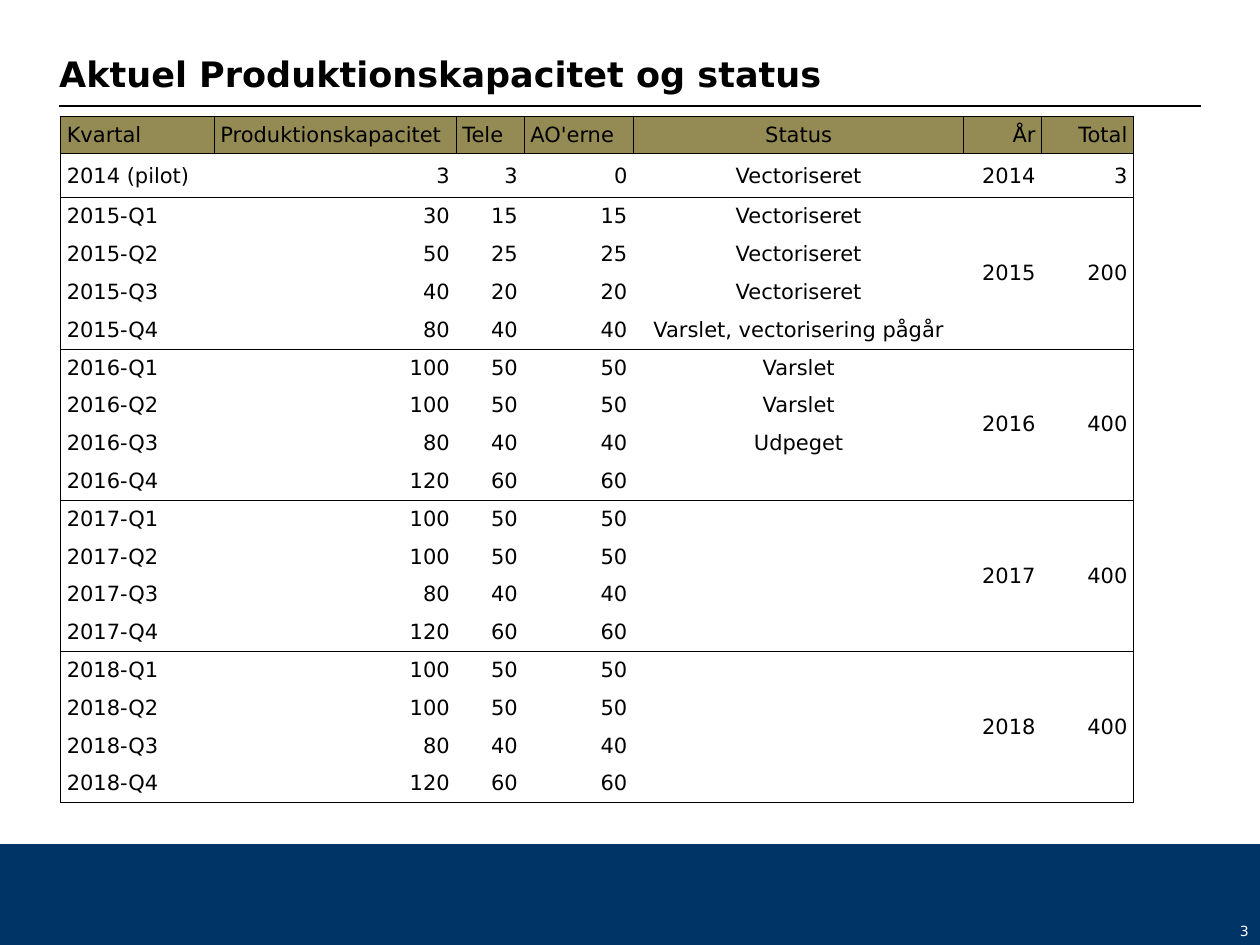
from dataclasses import dataclass

from lxml import etree
from pptx import Presentation
from pptx.dml.color import RGBColor
from pptx.enum import shapes, text
from pptx.oxml import ns
from pptx.util import Inches, Pt

LEFT, MID, RIGHT = text.PP_ALIGN.LEFT, text.PP_ALIGN.CENTER, text.PP_ALIGN.RIGHT


@dataclass
class Theme:
    face: str = "DejaVu Sans"
    ink: str = "000000"
    paper: str = "FFFFFF"
    navy: str = "003366"
    olive: str = "948B54"
    head: int = 20
    body: int = 12
    note: int = 8
    rule: float = 1
    edge: float = 0.5
    pad: float = 0.05


class Deck:
    def __init__(self, theme):
        self.theme = theme
        self.prs = Presentation()
        self.prs.slide_width, self.prs.slide_height = Inches(10), Inches(7.5)
        self.slide = self.prs.slides.add_slide(self.prs.slide_layouts[6])

    def font(self, para, size, color, bold=False):
        font = para.font
        font.name, font.size, font.bold = self.theme.face, Pt(size), bold
        font.color.rgb = RGBColor.from_string(color)

    def band(self, *box):
        shape = self.slide.shapes.add_shape(
            shapes.MSO_SHAPE.RECTANGLE, *map(Inches, box))
        shape.shadow.inherit = False
        shape.fill.solid()
        shape.fill.fore_color.rgb = RGBColor.from_string(self.theme.navy)
        shape.line.fill.background()

    def rule(self, *ends):
        line = self.slide.shapes.add_connector(
            shapes.MSO_CONNECTOR.STRAIGHT, *map(Inches, ends))
        line.line.color.rgb = RGBColor.from_string(self.theme.ink)
        line.line.width = Pt(self.theme.rule)
        etree.SubElement(line._element.spPr, ns.qn("a:effectLst"))

    def label(self, words, box, size, color, align=LEFT, space=1.0,
              anchor=text.MSO_ANCHOR.TOP, bold=False):
        frame = self.slide.shapes.add_textbox(*map(Inches, box)).text_frame
        frame.word_wrap = True
        frame.vertical_anchor = anchor
        frame.margin_left = frame.margin_right = 0
        frame.margin_top = frame.margin_bottom = 0
        para = frame.paragraphs[0]
        para.text, para.alignment, para.line_spacing = words, align, space
        self.font(para, size, color, bold)

    def table(self, left, top, cols, rows):
        table = self.slide.shapes.add_table(
            len(rows), len(cols), Inches(left), Inches(top),
            Inches(sum(cols)), Inches(sum(rows))).table
        table.first_row = table.horz_banding = False
        for col, width in zip(table.columns, cols):
            col.width = Inches(width)
        for row, height in zip(table.rows, rows):
            row.height = Inches(height)
        return table

    def cell(self, cell, words, align, sides, fill=None):
        cell.vertical_anchor = text.MSO_ANCHOR.MIDDLE
        cell.margin_left = cell.margin_right = Inches(self.theme.pad)
        cell.margin_top = cell.margin_bottom = Inches(self.theme.pad)
        para = cell.text_frame.paragraphs[0]
        para.text, para.alignment = words, align
        self.font(para, self.theme.body, self.theme.ink)
        if not words:  # keeps an empty cell from stretching its row
            etree.SubElement(para._p, ns.qn("a:endParaRPr"),
                             sz=str(self.theme.body * 100))
        if fill:
            cell.fill.solid()
            cell.fill.fore_color.rgb = RGBColor.from_string(fill)
        else:
            cell.fill.background()
        self.edges(cell, sides)

    def edges(self, cell, sides):
        """Draw the borders named in sides (L, R, T, B) and clear the others."""
        props = cell._tc.get_or_add_tcPr()
        for place, side in enumerate("LRTB"):
            line = etree.Element(ns.qn("a:ln" + side),
                                 w=str(Pt(self.theme.edge)))
            if side in sides:
                fill = etree.SubElement(line, ns.qn("a:solidFill"))
                etree.SubElement(fill, ns.qn("a:srgbClr"), val=self.theme.ink)
            else:
                etree.SubElement(line, ns.qn("a:noFill"))
            props.insert(place, line)


HEADS = ["Kvartal", "Produktionskapacitet", "Tele", "AO'erne", "Status", "År", "Total"]
COLS = [1.22, 1.92, 0.54, 0.87, 2.62, 0.62, 0.73]
ALIGNS = [LEFT, RIGHT, RIGHT, RIGHT, MID, RIGHT, RIGHT]
FULL = [100, 100, 80, 120]
DONE, TOLD = "Vectoriseret", "Varslet"
YEARS = {
    2015: ([30, 50, 40, 80], [DONE] * 3 + ["Varslet, vectorisering pågår"]),
    2016: (FULL, [TOLD, TOLD, "Udpeget", ""]),
    2017: (FULL, [""] * 4),
    2018: (FULL, [""] * 4),
}


def groups():
    """Yield the rows of each year; the two sides share a quarter equally."""
    yield [["2014 (pilot)", 3, 3, 0, DONE, 2014, 3]]
    for year, (loads, states) in YEARS.items():
        yield [[f"{year}-Q{n + 1}", load, load // 2, load // 2, state]
               + ([year, sum(loads)] if n == 0 else ["", ""])
               for n, (load, state) in enumerate(zip(loads, states))]


def plan(deck):
    table = deck.table(0.48, 0.92, COLS, [0.3, 0.35] + [0.3] * 16)
    last = len(COLS) - 1
    for c, head in enumerate(HEADS):
        align = ALIGNS[c] if c >= 4 else LEFT
        deck.cell(table.cell(0, c), head, align, "LRTB", deck.theme.olive)
    top = 1
    for group in groups():
        end = len(group) - 1
        for r, row in enumerate(group):
            for c, value in enumerate(row):
                sides = "L" * (c == 0) + "R" * (c == last) + "T" * (r == 0)
                sides += "B" * (r == end or (c >= 5 and r == 0))
                deck.cell(table.cell(top + r, c), str(value), ALIGNS[c], sides)
        if end:
            for c in (5, 6):
                table.cell(top, c).merge(table.cell(top + end, c))
        top += len(group)


def main():
    theme = Theme()
    deck = Deck(theme)
    deck.band(0, 6.7, 10, 0.8)
    deck.rule(0.47, 0.84, 9.53, 0.84)
    plan(deck)
    deck.label("Aktuel Produktionskapacitet og status", (0.47, 0.21, 9.06, 0.55),
               theme.head, theme.ink, space=0.96,
               anchor=text.MSO_ANCHOR.BOTTOM, bold=True)
    deck.label("3", (9.12, 7.3, 0.79, 0.15), theme.note, theme.paper, RIGHT, 1.15)
    deck.prs.save("out.pptx")


if __name__ == "__main__":
    main()
